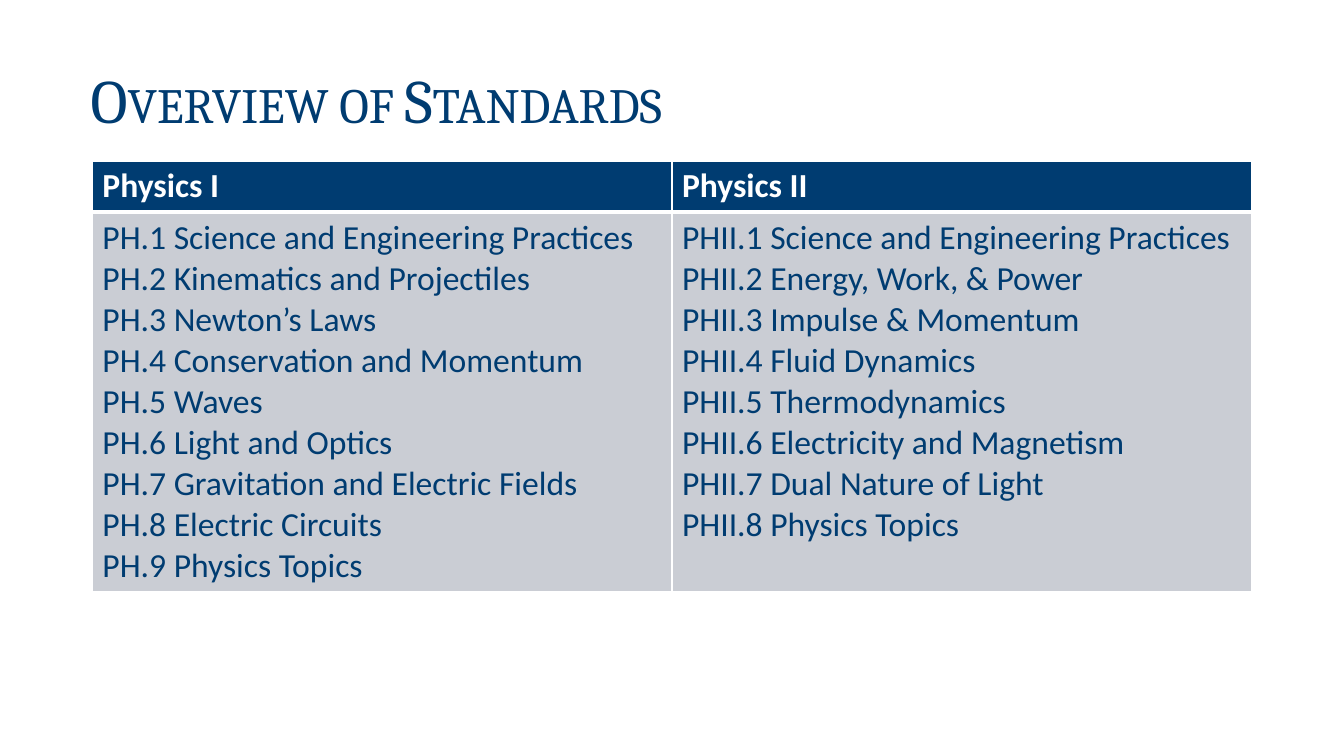
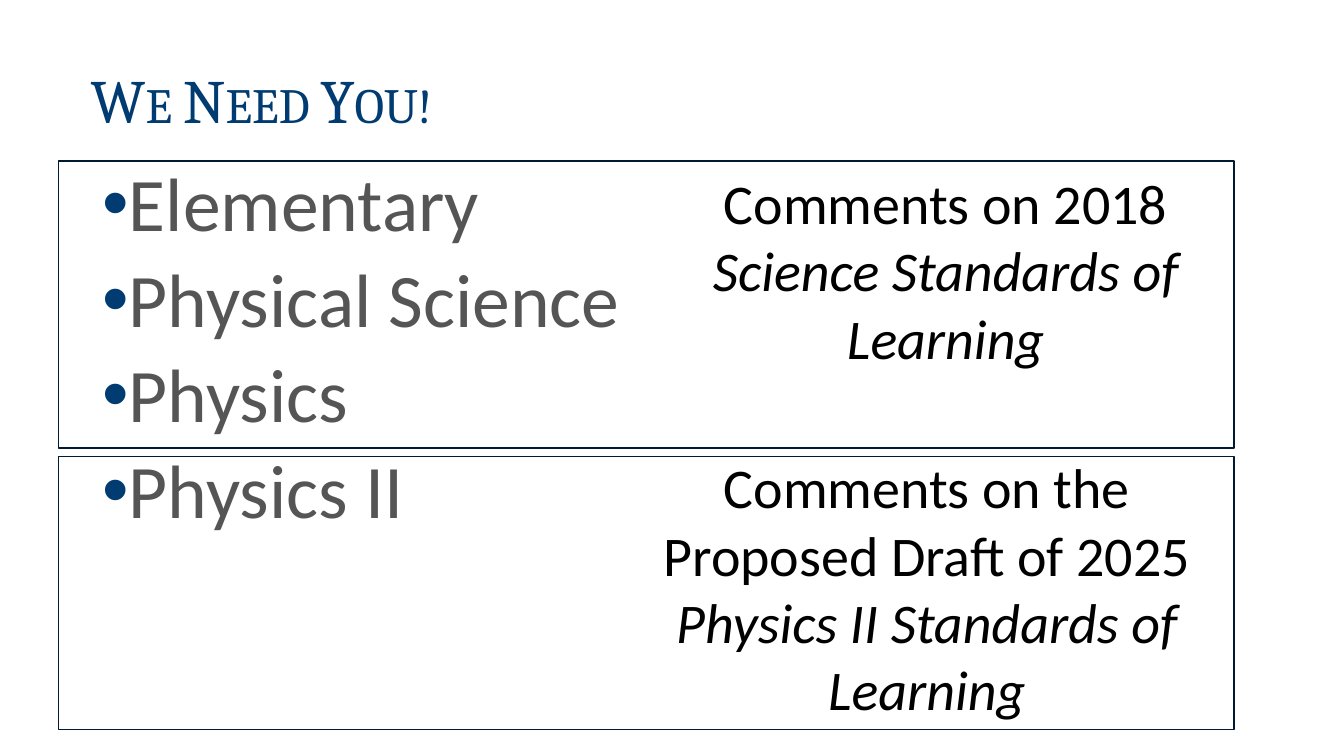
from lxml import etree
from pptx import Presentation
from pptx import util as u
from pptx.dml.color import RGBColor
from pptx.enum import shapes, text
from pptx.oxml import ns

NAVY = RGBColor(0x00, 0x3C, 0x71)
DARK = RGBColor(0x00, 0x1A, 0x32)
GREY = RGBColor(0x55, 0x55, 0x55)
PALE = RGBColor(0xCA, 0xCD, 0xD4)
WHITE = RGBColor(0xFF, 0xFF, 0xFF)
BLACK = RGBColor(0x00, 0x00, 0x00)

TITLE = {"name": "Cambria", "size": u.Pt(44), "bold": False}
HEADER = {"name": "Calibri", "size": u.Pt(24), "bold": True}
CELL = {**HEADER, "bold": False}
BULLET = {"name": "Calibri", "size": u.Pt(54)}
COMMENT = {"name": "Calibri", "size": u.Pt(40), "italic": False}
SPACING = {"line_spacing": 0.9, "space_before": u.Pt(10)}

TITLE_BOX = (0, 0, 960, 104.4)
CONTENT_BOX = (66, 115, 828, 371.5)
TITLE_ONLY, TITLE_AND_CONTENT = 5, 1

STANDARDS = {
    "Physics I": ("PH", [
        "Science and Engineering Practices", "Kinematics and Projectiles",
        "Newton’s Laws", "Conservation and Momentum", "Waves",
        "Light and Optics", "Gravitation and Electric Fields",
        "Electric Circuits", "Physics Topics"]),
    "Physics II": ("PHII", [
        "Science and Engineering Practices", "Energy, Work, & Power",
        "Impulse & Momentum", "Fluid Dynamics", "Thermodynamics",
        "Electricity and Magnetism", "Dual Nature of Light",
        "Physics Topics"]),
}
SUBJECTS = ["Elementary", "Physical Science", "Physics", "Physics II"]
PANELS = [
    ((42, 115, 839.5, 205), (448, 2, 371, 153),
     "Comments on 2018 ", "Science Standards of Learning"),
    ((42, 326, 839.5, 195), (415.5, -6, 409, 201),
     "Comments on the Proposed Draft of 2025 ",
     "Physics II Standards of Learning"),
]


def apply(target, values):
    """Set every attribute in a dict of format values."""
    for name, value in values.items():
        setattr(target, name, value)


def style(font, values, colour):
    """Format a font and colour it."""
    apply(font, values)
    font.color.rgb = colour


def points(box):
    """Turn a box of plain numbers into lengths."""
    return [u.Pt(value) for value in box]


def place(shape, box):
    """Move a shape to a box."""
    apply(shape, dict(zip(("left", "top", "width", "height"), points(box))))


def add_page(deck, layout, heading):
    """Add a page with the shared small-capital title."""
    page = deck.slides.add_slide(deck.slide_layouts[layout])
    title = page.shapes.title
    place(title, TITLE_BOX)
    frame = title.text_frame
    frame.text = heading
    apply(frame, {"margin_left": u.Pt(64.8), "margin_top": u.Pt(50.4),
                  "vertical_anchor": text.MSO_ANCHOR.TOP, "word_wrap": True,
                  "auto_size": text.MSO_AUTO_SIZE.NONE})
    para = frame.paragraphs[0]
    apply(para, {**SPACING, "alignment": text.PP_ALIGN.LEFT})
    span = para.runs[0]
    style(span.font, TITLE, NAVY)
    span.font._element.set("cap", "small")
    return page


def add_fill(parent, colour):
    """Append a solid fill to an XML element."""
    fill = etree.SubElement(parent, ns.qn("a:solidFill"))
    etree.SubElement(fill, ns.qn("a:srgbClr"), val=str(colour))


def set_borders(cell, widths):
    """Give a cell white borders of the given widths."""
    properties = cell._tc.get_or_add_tcPr()
    for index, (side, width) in enumerate(widths.items()):
        line = etree.Element(ns.qn(f"a:ln{side}"), w=str(u.Pt(width)))
        add_fill(line, WHITE)
        properties.insert(index, line)


def fill_cell(cell, words, values, colour, fill, bottom):
    """Write and format one table cell."""
    cell.text = words
    cell.fill.solid()
    cell.fill.fore_color.rgb = fill
    for para in cell.text_frame.paragraphs:
        style(para.runs[0].font, values, colour)
    set_borders(cell, {"L": 1, "R": 1, "T": 1, "B": bottom})


def standards_table(page, box):
    """Draw one column of numbered standards per course."""
    left, top, width, _ = box
    heights = (36, 270)
    frame = page.shapes.add_table(
        2, len(STANDARDS), *points((left, top, width, sum(heights))))
    table = frame.table
    table.horz_banding = False
    for row, height in zip(table.rows, heights):
        row.height = u.Pt(height)
    for column, (course, (code, topics)) in enumerate(STANDARDS.items()):
        lines = [f"{code}.{number} {topic}"
                 for number, topic in enumerate(topics, 1)]
        fill_cell(table.cell(0, column), course, HEADER, WHITE, NAVY, 3)
        fill_cell(table.cell(1, column), "\n".join(lines), CELL, NAVY, PALE, 1)


def subject_list(page, box):
    """Fill the body placeholder with bulleted subjects."""
    body = page.placeholders[1]
    place(body, box)
    frame = body.text_frame
    frame.text = "\n".join(SUBJECTS)
    frame.auto_size = text.MSO_AUTO_SIZE.NONE
    for para in frame.paragraphs:
        apply(para, SPACING)
        style(para.runs[0].font, BULLET, GREY)
        properties = para._p.get_or_add_pPr()
        properties.set("marL", str(u.Pt(18)))
        properties.set("indent", str(-u.Pt(18)))
        colour = etree.SubElement(properties, ns.qn("a:buClr"))
        etree.SubElement(colour, ns.qn("a:srgbClr"), val=str(NAVY))
        etree.SubElement(properties, ns.qn("a:buFont"), typeface="Arial")
        etree.SubElement(properties, ns.qn("a:buChar"), char="•")


def comment_panel(page, box, offset, plain, slanted):
    """Outline a box and set a centred comment inside it."""
    outline = page.shapes.add_shape(
        shapes.MSO_SHAPE.RECTANGLE, *points(box))
    outline.shadow.inherit = False
    outline.fill.background()
    outline.line.color.rgb = DARK
    outline.line.width = u.Pt(1)

    left, top, width, height = offset
    comment = page.shapes.add_textbox(
        *points((box[0] + left, box[1] + top, width, height)))
    frame = comment.text_frame
    apply(frame, {"word_wrap": True,
                  "auto_size": text.MSO_AUTO_SIZE.SHAPE_TO_FIT_TEXT})
    para = frame.paragraphs[0]
    para.alignment = text.PP_ALIGN.CENTER
    for words, italic in ((plain, False), (slanted, True)):
        span = para.add_run()
        span.text = words
        style(span.font, {**COMMENT, "italic": italic}, BLACK)


def main():
    """Build and save the deck."""
    deck = Presentation()
    apply(deck, {"slide_width": u.Pt(960), "slide_height": u.Pt(540)})
    overview = add_page(deck, TITLE_ONLY, "Overview of Standards")
    standards_table(overview, CONTENT_BOX)
    appeal = add_page(deck, TITLE_AND_CONTENT, "We Need You!")
    subject_list(appeal, CONTENT_BOX)
    for panel in PANELS:
        comment_panel(appeal, *panel)
    deck.save("out.pptx")


if __name__ == "__main__":
    main()
